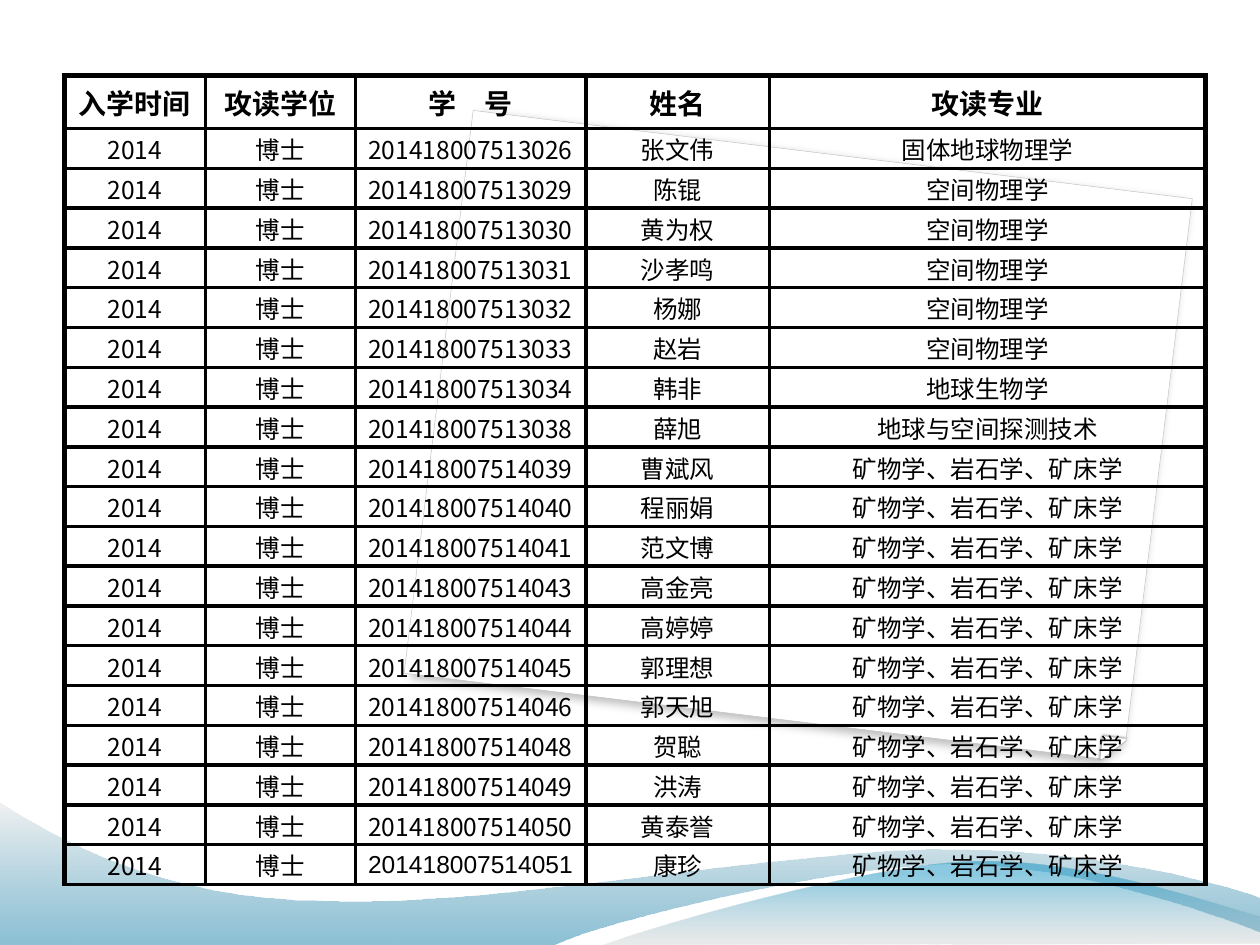
from lxml.etree import SubElement
from pptx import Presentation
from pptx.dml.color import RGBColor
from pptx.enum.shapes import MSO_SHAPE as Preset
from pptx.enum.text import MSO_ANCHOR as Anchor, PP_ALIGN as Align
from pptx.oxml.ns import qn
from pptx.util import Inches, Pt

FONT = "Noto Sans CJK SC"
BLACK, WHITE = "000000", "FFFFFF"
THIN, THICK = 2.25, 3
HEADER_HEIGHT = 0.42
COLUMN_WIDTHS = [1.12, 1.19, 1.83, 1.46, 3.46]
HEADINGS = ["入学时间", "攻读学位", "学　号", "姓名", "攻读专业"]
YEAR, DEGREE = "2014", "博士"
SPACE_PHYSICS = "空间物理学"
MINERALOGY = "矿物学、岩石学、矿床学"
STUDENTS = [
    ("201418007513026", "张文伟", "固体地球物理学"),
    ("201418007513029", "陈锟", SPACE_PHYSICS),
    ("201418007513030", "黄为权", SPACE_PHYSICS),
    ("201418007513031", "沙孝鸣", SPACE_PHYSICS),
    ("201418007513032", "杨娜", SPACE_PHYSICS),
    ("201418007513033", "赵岩", SPACE_PHYSICS),
    ("201418007513034", "韩非", "地球生物学"),
    ("201418007513038", "薛旭", "地球与空间探测技术"),
    ("201418007514039", "曹斌风", MINERALOGY),
    ("201418007514040", "程丽娟", MINERALOGY),
    ("201418007514041", "范文博", MINERALOGY),
    ("201418007514043", "高金亮", MINERALOGY),
    ("201418007514044", "高婷婷", MINERALOGY),
    ("201418007514045", "郭理想", MINERALOGY),
    ("201418007514046", "郭天旭", MINERALOGY),
    ("201418007514048", "贺聪", MINERALOGY),
    ("201418007514049", "洪涛", MINERALOGY),
    ("201418007514050", "黄泰誉", MINERALOGY),
    ("201418007514051", "康珍", MINERALOGY),
]
ARIAL_ID = "201418007514051"

LOWER_WAVE = [
    [(0.01, 1.14)],
    [(4.41, 1.14)],
    [(4.77, 0.96), (6.65, 0.5), (7.59, 0.5)],
    [(8.54, 0.5), (9.59, 0.88), (10.01, 1.04)],
    [(10.02, 0.77)],
    [(9.84, 0.69), (8.71, 0.37), (7.47, 0.38)],
    [(6.23, 0.38), (3.83, 0.85), (2.58, 0.79)],
    [(1.3, 0.78), (0.47, 0.3), (0, 0)],
    [(0.01, 1.14)],
]
RIGHT_WAVE = [
    [(0, 0.7)],
    [(0.3, 0.58), (2.03, 0.07), (2.9, 0.04)],
    [(3.77, 0), (4.82, 0.37), (5.21, 0.48)],
    [(5.21, 0.69)],
    [(0, 0.7)],
]


def rgb(value):
    return RGBColor.from_string(value)


def add_solid(parent, value, alpha=100):
    color = SubElement(parent, qn("a:srgbClr"), val=value)
    if alpha < 100:
        SubElement(color, qn("a:alpha"), val=str(alpha * 1000))


def add_tilted_card(slide, preset, box, outline, outline_width, alpha, shadow):
    card = slide.shapes.add_shape(preset, *map(Inches, box))
    card.rotation = 7
    card.element.spPr.find(qn("a:xfrm")).set("flipV", "1")
    card.fill.solid()
    card.fill.fore_color.rgb = rgb(WHITE)
    card.line.color.rgb = rgb(outline)
    card.line.width = Pt(outline_width)
    card.shadow.inherit = False
    effects = card.element.spPr.find(qn("a:effectLst"))
    add_solid(SubElement(effects, qn("a:outerShdw"), shadow), BLACK, alpha)
    return card


def shadow_settings(blur, distance, angle, **skew):
    return {"blurRad": str(Pt(blur)), "dist": str(Pt(distance)),
            "dir": str(angle * 60000), **skew, "algn": "tl", "rotWithShape": "0"}


def add_paper(slide, box):
    left, top, width, height = box
    paper_shadow = shadow_settings(5, 3, 125, sx="98500", sy="100080", kx="100000")
    paper = add_tilted_card(slide, Preset.SNIP_ROUND_RECTANGLE, box,
                            "C0C0C0", 0.25, 25, paper_shadow)
    paper.adjustments[0] = 0
    paper.adjustments[1] = 0.036
    fold = (left + width - 0.46, top + height + 0.15, 0.17, 0.17)
    corner = add_tilted_card(slide, Preset.RIGHT_TRIANGLE, fold,
                             WHITE, 1, 47, shadow_settings(1.6, 0.5, 215))
    return [paper, corner]


def bend_segments(wave, segments):
    strokes = list(wave.element.spPr.iter(qn("a:lnTo")))
    for segment in segments[1:]:
        pieces, strokes = strokes[:len(segment)], strokes[len(segment):]
        if len(pieces) == 3:
            curve = pieces[0].getparent().makeelement(qn("a:cubicBezTo"))
            pieces[0].addprevious(curve)
            for piece in pieces:
                curve.append(piece[0])
                piece.getparent().remove(piece)


def add_wave(slide, origin, segments, stops):
    left, top = origin
    points = [(Inches(left + x), Inches(top + y)) for segment in segments for x, y in segment]
    builder = slide.shapes.build_freeform(*points[0])
    builder.add_line_segments(points[1:], close=True)
    wave = builder.convert_to_shape()
    bend_segments(wave, segments)
    wave.shadow.inherit = False
    wave.line.fill.background()
    wave.fill.gradient()
    wave.fill.gradient_angle = 90
    for stop, (position, value, _) in zip(wave.fill.gradient_stops, stops):
        stop.position = position
        stop.color.rgb = rgb(value)
    for color, (_, _, alpha) in zip(wave.element.spPr.iter(qn("a:srgbClr")), stops):
        SubElement(color, qn("a:alpha"), val=str(alpha * 1000))
    return wave


def add_backdrop(slide):
    backdrop = add_paper(slide, (3.46, 1.21, 5.75, 4.5))
    backdrop.append(add_wave(slide, (-0.01, 6.36), LOWER_WAVE,
                             [(0, "0074A1", 45), (1, "E7E7E7", 55)]))
    backdrop.append(add_wave(slide, (4.79, 6.8), RIGHT_WAVE,
                             [(0, "BDBDBD", 30), (0.8, "008BBF", 45)]))
    for part in backdrop:
        slide.slide_layout.shapes.element.append(part.element)


def set_borders(cell, widths):
    properties = cell._tc.get_or_add_tcPr()
    for index, (side, width) in enumerate(zip("LRTB", widths)):
        border = SubElement(properties, qn(f"a:ln{side}"), w=str(Pt(width)))
        add_solid(SubElement(border, qn("a:solidFill")), BLACK)
        properties.insert(index, border)


def write_cell(cell, text, is_heading, hanging):
    cell.fill.background()
    cell.vertical_anchor = Anchor.MIDDLE
    if not is_heading:
        cell.margin_left = cell.margin_right = cell.margin_top = Inches(0.01)
        cell.margin_bottom = 0
    paragraph = cell.text_frame.paragraphs[0]
    paragraph.alignment = Align.CENTER
    if hanging:
        properties = paragraph._p.get_or_add_pPr()
        properties.set("marL", str(Inches(0.3)))
        properties.set("indent", str(Inches(-0.3)))
    run = paragraph.add_run()
    run.text = text
    run.font.size = Pt(16 if is_heading else 14)
    run.font.bold = is_heading
    run.font.color.rgb = rgb(BLACK)
    run.font.name = "Arial" if text == ARIAL_ID else FONT
    SubElement(run._r.get_or_add_rPr(), qn("a:ea"), typeface=FONT)


def add_roster(slide, box):
    rows = [HEADINGS] + [(YEAR, DEGREE, *student) for student in STUDENTS]
    last = len(HEADINGS) - 1
    roster = slide.shapes.add_table(len(rows), len(HEADINGS), *map(Inches, box)).table
    roster.first_row = roster.horz_banding = False
    for column, width in zip(roster.columns, COLUMN_WIDTHS):
        column.width = Inches(width)
    student_height = (box[3] - HEADER_HEIGHT) / len(STUDENTS)
    for r, row in enumerate(rows):
        roster.rows[r].height = Inches(student_height if r else HEADER_HEIGHT)
        for c, text in enumerate(row):
            cell = roster.cell(r, c)
            write_cell(cell, text, r == 0, r == 0 and c != 1)
            set_borders(cell, [THICK if c == 0 else THIN, THICK if c == last else THIN,
                               THICK if r == 0 else THIN, THIN])


def main():
    deck = Presentation()
    deck.slide_width, deck.slide_height = Inches(10), Inches(7.5)
    slide = deck.slides.add_slide(deck.slide_layouts[6])
    add_backdrop(slide)
    add_roster(slide, (0.51, 0.6, 9.06, 6.42))
    deck.save("out.pptx")


if __name__ == "__main__":
    main()
